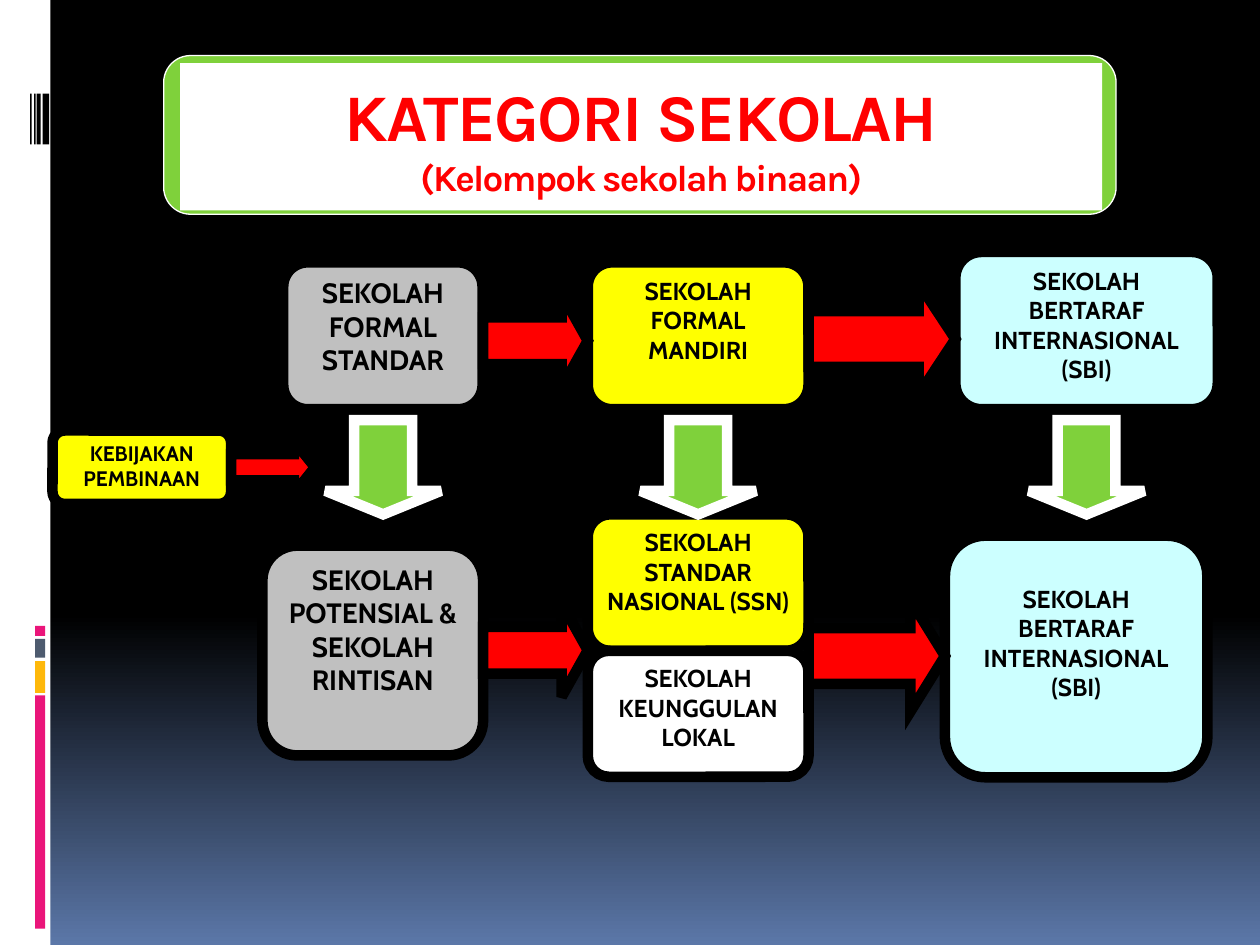
import pptx
import pptx.util
import pptx.dml.color
import pptx.enum.shapes
import pptx.enum.text
import lxml.etree
import dataclasses

Cm = pptx.util.Cm
Pt = pptx.util.Pt
Kind = pptx.enum.shapes.MSO_SHAPE
Text = pptx.enum.text


@dataclasses.dataclass(frozen=True)
class Theme:
    black: str = "000000"
    white: str = "FFFFFF"
    red: str = "FF0000"
    green: str = "7FD13B"
    gray: str = "C0C0C0"
    yellow: str = "FFFF00"
    cyan: str = "CCFFFF"
    pink: str = "EA157A"
    gold: str = "FEB80A"
    slate: str = "4E5B6F"
    blue: str = "5B77A8"
    head: str = "Karla"
    body: str = "Cabin"
    title: int = 38
    sub: int = 21
    large: int = 16
    mid: int = 14
    small: int = 12


look = Theme()
color = pptx.dml.color.RGBColor.from_string

deck = pptx.Presentation()
deck.slide_width, deck.slide_height = Cm(25.4), Cm(19.05)
slide = deck.slides.add_slide(deck.slide_layouts[5])

back = slide.background.fill
back.gradient()
back.gradient_angle = 270
for stop, spot, tone in zip(back.gradient_stops, (0.65, 1), (look.black, look.blue)):
    stop.position = spot
    stop.color.rgb = color(tone)


def draw(kind, at, fill, line=None, width=6):
    shape = slide.shapes.add_shape(kind, *map(Cm, at))
    shape.shadow.inherit = False
    shape.fill.solid()
    shape.fill.fore_color.rgb = color(fill)
    if line:
        shape.line.color.rgb = color(line)
        shape.line.width = Pt(width)
    else:
        shape.line.fill.background()
    return shape


def write(para, text, font, size, tone):
    run = para.add_run()
    run.text = text
    run.font.name = font
    run.font.size = Pt(size)
    run.font.bold = True
    run.font.color.rgb = color(tone)
    para.alignment = Text.PP_ALIGN.CENTER
    return run


draw(Kind.RECTANGLE, (0, 0, 1.02, 19.05), look.white)
for top, high, tone in (
    (14.02, 4.7, look.pink),
    (13.33, 0.64, look.gold),
    (12.88, 0.38, look.slate),
    (12.62, 0.2, look.pink),
):
    draw(Kind.RECTANGLE, (0.71, top, 0.2, high), tone)
for left, wide in ((0.86, 0.13), (0.74, 0.08), (0.69, 0.03), (0.61, 0.03)):
    draw(Kind.RECTANGLE, (left, 1.89, wide, 1.02), look.black)

frame = draw(Kind.ROUNDED_RECTANGLE, (3.3, 1.12, 19.2, 3.2), look.green, look.white, 0.75)
frame.adjustments[0] = 0.17

title = slide.shapes.title
slide.shapes._spTree.append(title._element)
title.left, title.top, title.width, title.height = map(Cm, (3.63, 1.27, 18.59, 2.97))
title.fill.solid()
title.fill.fore_color.rgb = color(look.white)
title.text_frame.auto_size = Text.MSO_AUTO_SIZE.NONE
title.text_frame.vertical_anchor = Text.MSO_ANCHOR.MIDDLE
para = title.text_frame.paragraphs[0]
first = write(para, "KATEGORI SEKOLAH", look.head, look.title, look.red)
para.add_line_break()
last = write(para, "(Kelompok sekolah binaan)", look.head, look.sub, look.red)
for run in (first, last):
    run.font._element.set("spc", "-100")

box, right, down = Kind.FLOWCHART_ALTERNATE_PROCESS, Kind.RIGHT_ARROW, Kind.DOWN_ARROW
global_school = "SEKOLAH BERTARAF INTERNASIONAL (SBI)"
parts = (
    (box, (5.29, 11, 4.45, 4.23), look.gray, "SEKOLAH POTENSIAL & SEKOLAH RINTISAN", look.large),
    (box, (11.85, 10.37, 4.45, 2.75), look.yellow, "SEKOLAH STANDAR NASIONAL (SSN)", look.mid),
    (box, (19.05, 10.8, 5.29, 4.87), look.cyan, global_school, look.mid, 0.73),
    (right, (9.74, 12.17, 2.11, 1.88), look.red, 0.28),
    (right, (16.3, 12.1, 2.75, 2.25), look.red, 0.31),
    (box, (11.85, 13.12, 4.45, 2.54), look.white, "SEKOLAH KEUNGGULAN LOKAL", look.mid),
    (box, (5.71, 5.29, 4.02, 2.96), look.gray, "SEKOLAH FORMAL STANDAR", look.large),
    (box, (11.85, 5.29, 4.45, 2.96), look.yellow, "SEKOLAH FORMAL MANDIRI", look.mid),
    (box, (19.26, 5.08, 5.29, 3.17), look.cyan, global_school, look.mid),
    (right, (9.74, 5.93, 2.11, 1.88), look.red, 0.28),
    (right, (16.3, 5.71, 2.96, 2.25), look.red, 0.33),
    *((down, (left, 8.47, 2.33, 1.9), look.green, 0.25) for left in (6.56, 12.91, 20.74)),
    (box, (1.06, 8.68, 3.6, 1.48), look.yellow, "KEBIJAKAN PEMBINAAN", look.small),
    (right, (4.66, 8.89, 1.69, 1.06), look.red, 0.4),
)
for kind, at, fill, *rest in parts:
    shape = draw(kind, at, fill, look.white if kind == down else look.black)
    if kind == box:
        text, size, *inset = rest
        body = shape.text_frame
        body.word_wrap = True
        body.vertical_anchor = Text.MSO_ANCHOR.TOP
        if inset:
            body.margin_top = Cm(inset[0])
        write(body.paragraphs[0], text, look.body, size, look.black)
    else:
        shape.adjustments[0] = 0.5
        shape.adjustments[1] = rest[0]
        edge = shape.line._get_or_add_ln()
        space = lxml.etree.QName(edge).namespace
        lxml.etree.SubElement(edge, f"{{{space}}}miter", lim="800000")

deck.save("out.pptx")
